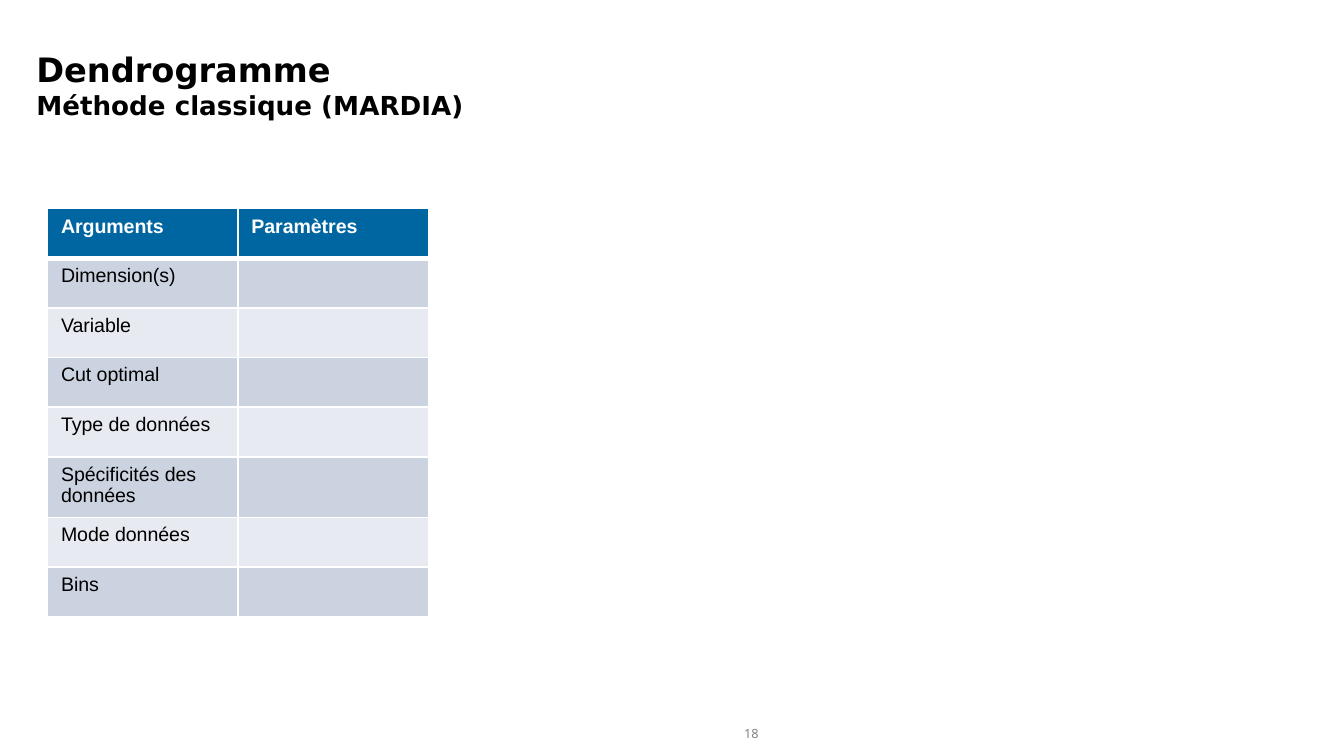
"""Build the dendrogram slide with its table of arguments."""
from lxml import etree
from pptx import Presentation
from pptx.dml.color import RGBColor
from pptx.enum import text
from pptx.oxml import ns
from pptx.util import Pt

WHITE = RGBColor(0xFF, 0xFF, 0xFF)
BLACK = RGBColor(0, 0, 0)
GREY = RGBColor(0x81, 0x81, 0x81)
BLUE = RGBColor(0x00, 0x66, 0xA1)
BANDS = RGBColor(0xCC, 0xD3, 0xE0), RGBColor(0xE7, 0xEA, 0xF0)

HEAD = dict(name="DejaVu Sans", bold=True)
TITLE = [
    ("Dendrogramme", dict(HEAD, size=Pt(18)), BLACK),
    ("Méthode classique (MARDIA)", dict(HEAD, size=Pt(14)), BLACK),
]
PAGE = [("18", dict(name="Noto Sans", size=Pt(6.8)), GREY)]
ROWS = [
    ("Arguments", "Paramètres"),
    ("Dimension(s)", ""),
    ("Variable", ""),
    ("Cut optimal", ""),
    ("Type de données", ""),
    ("Spécificités des données", ""),
    ("Mode données", ""),
    ("Bins", ""),
]
LEFT, TOP, WIDE, HIGH = 25.5, 111.8, 102, 26.6
SIZE = 10.5


def write(para, words, form, color):
    run = para.add_run()
    run.text = words
    for key, value in form.items():
        setattr(run.font, key, value)
    run.font.color.rgb = color


def add_box(slide, area, lines, form, align):
    frame = slide.shapes.add_textbox(*map(Pt, area)).text_frame
    for key, value in form.items():
        setattr(frame, key, value)
    for i, line in enumerate(lines):
        para = frame.add_paragraph() if i else frame.paragraphs[0]
        para.alignment = align
        write(para, *line)


def add_edge(cell, side, width):
    props = cell._tc.get_or_add_tcPr()
    edge = etree.SubElement(props, ns.qn("a:ln" + side), w=str(Pt(width)))
    fill = etree.SubElement(edge, ns.qn("a:solidFill"))
    etree.SubElement(fill, ns.qn("a:srgbClr"), val=str(WHITE))


def fill_cell(cell, words, row):
    for side in "LRTB":
        thick = (row, side) in ((0, "B"), (1, "T"))
        add_edge(cell, side, 3 if thick else 1)
    cell.fill.solid()
    cell.fill.fore_color.rgb = BANDS[(row - 1) % 2] if row else BLUE
    para = cell.text_frame.paragraphs[0]
    if words:
        form = dict(name="Arial", size=Pt(SIZE), bold=row == 0)
        write(para, words, form, BLACK if row else WHITE)
    else:
        etree.SubElement(para._p, ns.qn("a:endParaRPr"), sz=str(int(SIZE * 100)))


def add_grid(slide):
    count, span = len(ROWS), len(ROWS[0])
    area = LEFT, TOP, WIDE * span, HIGH * count
    grid = slide.shapes.add_table(count, span, *map(Pt, area)).table
    for col in grid.columns:
        col.width = Pt(WIDE)
    for r, row in enumerate(ROWS):
        grid.rows[r].height = Pt(HIGH)
        for c, words in enumerate(row):
            fill_cell(grid.cell(r, c), words, r)


def main():
    deck = Presentation()
    deck.slide_width, deck.slide_height = Pt(720), Pt(405)
    slide = deck.slides.add_slide(deck.slide_layouts[6])
    page = dict(word_wrap=True, vertical_anchor=text.MSO_ANCHOR.MIDDLE,
                margin_left=Pt(6), margin_right=Pt(6),
                margin_top=Pt(3), margin_bottom=Pt(3))
    add_box(slide, (378, 386, 49, 14.4), PAGE, page, text.PP_ALIGN.CENTER)
    add_box(slide, (12.4, 22.8, 473, 44.6), TITLE, dict(word_wrap=True),
            text.PP_ALIGN.LEFT)
    add_grid(slide)
    deck.save("out.pptx")


if __name__ == "__main__":
    main()
